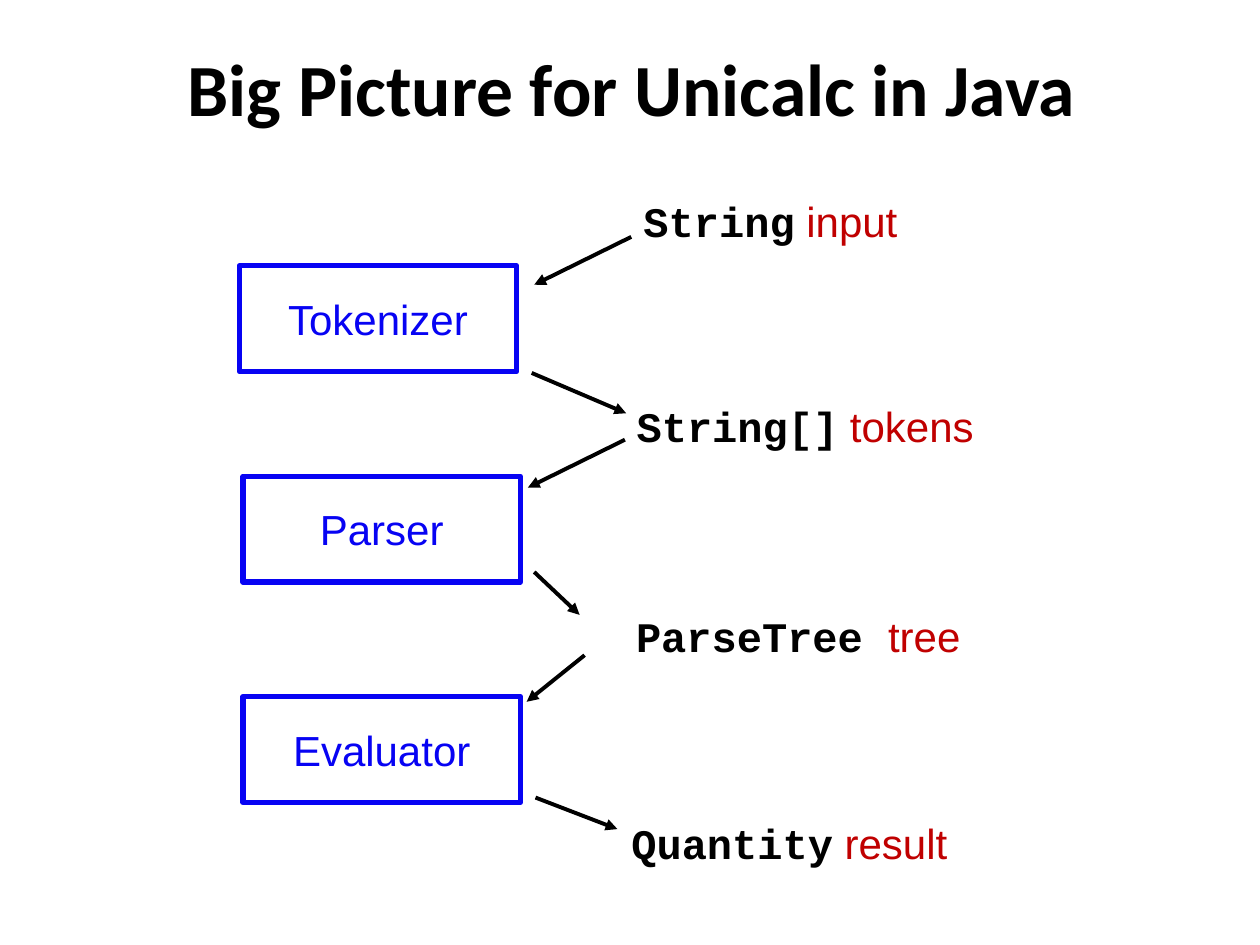
from dataclasses import dataclass

from lxml.etree import SubElement
from pptx import Presentation
from pptx.dml.color import RGBColor
from pptx.enum.shapes import MSO_CONNECTOR, MSO_SHAPE
from pptx.enum.text import MSO_ANCHOR, MSO_AUTO_SIZE, PP_ALIGN
from pptx.oxml.ns import qn
from pptx.slide import Slide
from pptx.text.text import TextFrame
from pptx.util import Emu, Pt

PX = 9144  # 100 px to the inch


@dataclass(frozen=True)
class Theme:
    ink: str = "000000"
    stage: str = "0703F3"
    name: str = "C00000"
    title_font: str = "Calibri"
    body_font: str = "Arial"
    code_font: str = "Courier New"
    title_size: int = 42
    body_size: int = 24
    box_line: float = 3
    arrow_line: float = 2.25


@dataclass(frozen=True)
class Stage:
    label: str
    x: int
    y: int


@dataclass(frozen=True)
class Value:
    type_name: str
    name: str
    x: int
    y: int
    w: int


@dataclass(frozen=True)
class Arrow:
    x1: int
    y1: int
    x2: int
    y2: int


THEME = Theme()
STAGE_W, STAGE_H = 220, 84
VALUE_H = 50

STAGES = [
    Stage("Tokenizer", 190, 211),
    Stage("Parser", 193, 378),
    Stage("Evaluator", 193, 553),
]
VALUES = [
    Value("String", " input", 478, 150, 267),
    Value("String[]", " tokens", 473, 313, 332),
    Value("ParseTree ", "tree", 426, 480, 415),
    Value("Quantity", " result", 460, 644, 333),
]
ARROWS = [
    Arrow(501, 188, 424, 226),
    Arrow(422, 296, 497, 328),
    Arrow(496, 349, 419, 387),
    Arrow(424, 454, 460, 488),
    Arrow(464, 520, 418, 557),
    Arrow(425, 633, 490, 658),
]


def px(*lengths: int) -> list[Emu]:
    return [Emu(n * PX) for n in lengths]


def add_text(tf: TextFrame, text: str, *, color: str, font: str = THEME.body_font,
             size: int = THEME.body_size, bold: bool = False) -> None:
    """Append a formatted run to the centred first paragraph."""
    p = tf.paragraphs[0]
    p.alignment = PP_ALIGN.CENTER
    r = p.add_run()
    r.text = text
    r.font.name, r.font.size, r.font.bold = font, Pt(size), bold
    r.font.color.rgb = RGBColor.from_string(color)


def add_title(s: Slide, text: str) -> None:
    sp = s.shapes.title
    sp.left, sp.top, sp.width, sp.height = px(97, 29, 822, 80)
    tf = sp.text_frame
    tf.auto_size = MSO_AUTO_SIZE.NONE
    tf.vertical_anchor = MSO_ANCHOR.TOP
    add_text(tf, text, color=THEME.ink, font=THEME.title_font,
             size=THEME.title_size, bold=True)


def add_stage(s: Slide, stage: Stage) -> None:
    sp = s.shapes.add_shape(MSO_SHAPE.RECTANGLE, *px(stage.x, stage.y, STAGE_W, STAGE_H))
    sp.shadow.inherit = False
    sp.fill.background()
    sp.line.color.rgb = RGBColor.from_string(THEME.stage)
    sp.line.width = Pt(THEME.box_line)
    sp.text_frame.vertical_anchor = MSO_ANCHOR.MIDDLE
    add_text(sp.text_frame, stage.label, color=THEME.stage)


def add_value(s: Slide, value: Value) -> None:
    tf = s.shapes.add_textbox(*px(value.x, value.y, value.w, VALUE_H)).text_frame
    tf.word_wrap = True
    add_text(tf, value.type_name, color=THEME.ink, font=THEME.code_font, bold=True)
    add_text(tf, value.name, color=THEME.name)


def add_arrow(s: Slide, arrow: Arrow) -> None:
    cxn = s.shapes.add_connector(MSO_CONNECTOR.STRAIGHT,
                                 *px(arrow.x1, arrow.y1, arrow.x2, arrow.y2))
    cxn.line.color.rgb = RGBColor.from_string(THEME.ink)
    cxn.line.width = Pt(THEME.arrow_line)
    SubElement(cxn.line._get_or_add_ln(), qn("a:tailEnd"), type="triangle")
    SubElement(cxn._element.spPr, qn("a:effectLst"))


def main() -> None:
    prs = Presentation()
    prs.slide_width, prs.slide_height = px(1000, 750)
    s = prs.slides.add_slide(prs.slide_layouts.get_by_name("Title Only"))
    add_title(s, "Big Picture for Unicalc in Java ")
    for stage in STAGES:
        add_stage(s, stage)
    for value in VALUES:
        add_value(s, value)
    for arrow in ARROWS:
        add_arrow(s, arrow)
    prs.save("out.pptx")


if __name__ == "__main__":
    main()
